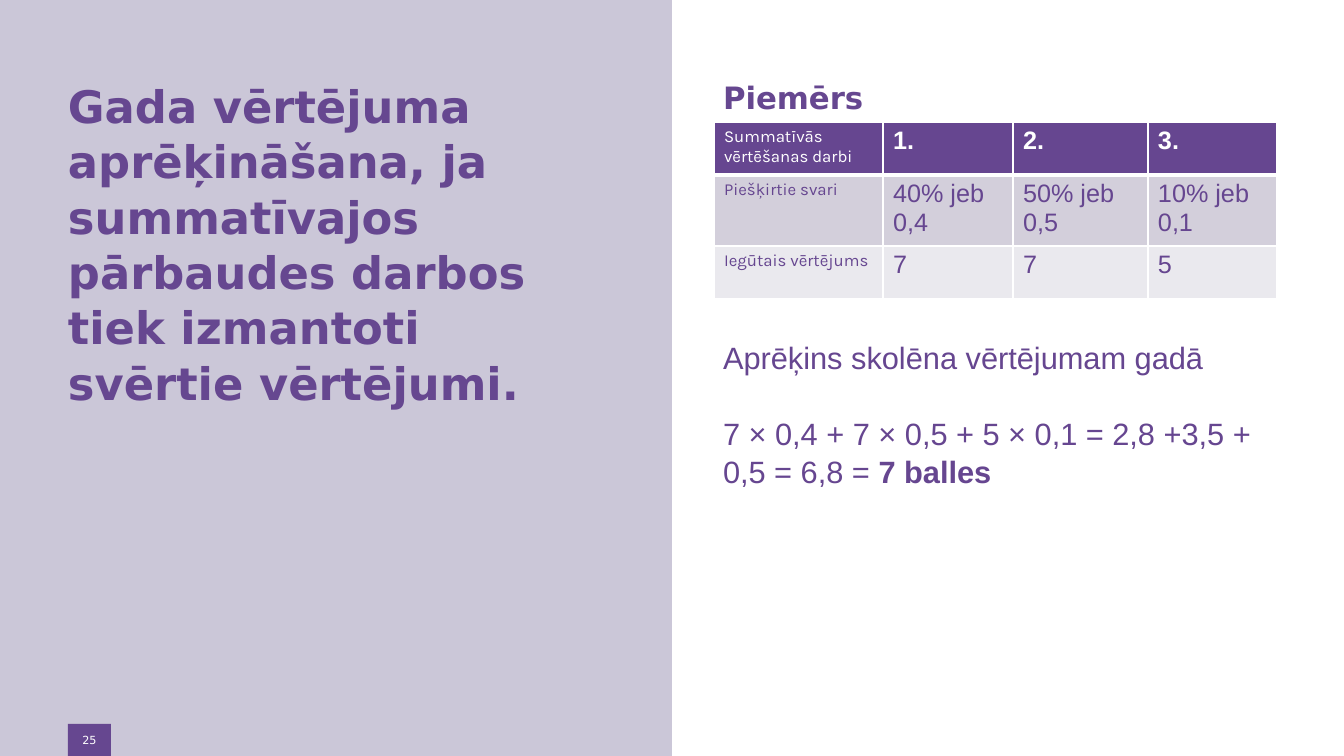
from lxml import etree
from pptx import Presentation
from pptx.dml.color import RGBColor
from pptx.enum.shapes import MSO_SHAPE
from pptx.enum.text import MSO_ANCHOR, MSO_AUTO_SIZE, PP_ALIGN
from pptx.oxml.ns import qn
from pptx.util import Pt

RECTANGLE = MSO_SHAPE.RECTANGLE
TOP, MIDDLE = MSO_ANCHOR.TOP, MSO_ANCHOR.MIDDLE
LEFT, CENTER = PP_ALIGN.LEFT, PP_ALIGN.CENTER
NO_AUTOFIT = MSO_AUTO_SIZE.NONE

# Content
HEADING = ("Gada vērtējuma aprēķināšana, ja summatīvajos pārbaudes darbos "
           "tiek izmantoti svērtie vērtējumi.")
PAGE = "25"
PURPLE, TABLE_PURPLE, LILAC, WHITE = "664790", "664690", "CBC7D8", "FFFFFF"
SANS, ARIAL, KARLA = "DejaVu Sans", "Arial", "Karla"

# Each paragraph: gap above in px, font, colour, runs of (text, bold)
EXAMPLE = [
    (0, SANS, PURPLE, [("Piemērs", True)]),
    (222, ARIAL, TABLE_PURPLE, [("Aprēķins skolēna vērtējumam gadā", False)]),
    (37, ARIAL, TABLE_PURPLE, [
        ("7 × 0,4 + 7 × 0,5 + 5 × 0,1 = 2,8 +3,5 + 0,5 = 6,8 = ", False),
        ("7 balles", True)]),
]
GRADES = [
    ("Summatīvās vērtēšanas darbi", "1.", "2.", "3."),
    ("Piešķirtie svari", "40% jeb 0,4", "50% jeb 0,5", "10% jeb 0,1"),
    ("Iegūtais vērtējums", "7", "7", "5"),
]
ROW_FILLS = [TABLE_PURPLE, "D3CFDB", "EAE9EE"]
ROW_HEIGHTS = [53, 71, 53]
COLUMN_WIDTHS = [169, 130, 135, 129]

SLIDE_W, SLIDE_H = 1344, 756
SCALE = 12192000 / SLIDE_W


def px(length):
    return round(length * SCALE)


def rgb(value):
    return RGBColor.from_string(value)


def style(run, font, size, color, bold=False):
    run.font.name = font
    run.font.size = Pt(size)
    run.font.color.rgb = rgb(color)
    run.font.bold = bold


def place(shape, left, top, width, height):
    shape.left, shape.top = px(left), px(top)
    shape.width, shape.height = px(width), px(height)


def add_panel(left, top, width, height, color):
    panel = slide.shapes.add_shape(
        RECTANGLE, px(left), px(top), px(width), px(height))
    panel.shadow.inherit = False
    panel.fill.solid()
    panel.fill.fore_color.rgb = rgb(color)
    panel.line.fill.background()
    return panel


def add_border(cell, side, points):
    line = etree.SubElement(cell._tc.get_or_add_tcPr(), qn("a:" + side),
                            w=str(Pt(points)))
    fill = etree.SubElement(line, qn("a:solidFill"))
    etree.SubElement(fill, qn("a:srgbClr"), val=WHITE)


prs = Presentation()
prs.slide_width, prs.slide_height = px(SLIDE_W), px(SLIDE_H)
slide = prs.slides.add_slide(prs.slide_layouts[1])
heading, example = slide.placeholders

# Left half, behind the heading
left_half = add_panel(0, 0, SLIDE_W // 2, SLIDE_H, LILAC)
heading.element.addprevious(left_half.element)

# Heading
place(heading, 68, 72, 486, 216)
frame = heading.text_frame
frame.text = HEADING
frame.word_wrap = True
frame.auto_size = NO_AUTOFIT
frame.vertical_anchor = TOP
frame.margin_left = frame.margin_right = 0
frame.paragraphs[0].alignment = LEFT
frame.paragraphs[0].line_spacing = 1.03
style(frame.paragraphs[0].runs[0], SANS, 32, PURPLE, True)

# Page number
page = add_panel(68, 724, 43, 32, PURPLE)
frame = page.text_frame
frame.text = PAGE
frame.vertical_anchor = MIDDLE
frame.margin_left = frame.margin_right = px(4)
frame.margin_top = frame.margin_bottom = px(4)
frame.paragraphs[0].alignment = CENTER
style(frame.paragraphs[0].runs[0], SANS, 8, WHITE)

# Worked example; the gap after its first line holds the table
place(example, 713, 72, 554, 532)
frame = example.text_frame
frame.auto_size = NO_AUTOFIT
frame.vertical_anchor = TOP
for index, (gap, font, color, runs) in enumerate(EXAMPLE):
    paragraph = frame.paragraphs[0] if index == 0 else frame.add_paragraph()
    paragraph.alignment = LEFT
    paragraph.line_spacing = 1.04
    paragraph.space_before = px(gap)
    properties = paragraph._p.get_or_add_pPr()
    properties.set("marL", "0")
    properties.set("indent", "0")
    etree.SubElement(properties, qn("a:buNone"))
    for text, bold in runs:
        run = paragraph.add_run()
        run.text = text
        style(run, font, 22, color, bold)

# Grade table
grades = slide.shapes.add_table(
    len(GRADES), len(COLUMN_WIDTHS), px(714), px(122),
    px(sum(COLUMN_WIDTHS)), px(sum(ROW_HEIGHTS))).table
for column, width in zip(grades.columns, COLUMN_WIDTHS):
    column.width = px(width)
for r, values in enumerate(GRADES):
    grades.rows[r].height = px(ROW_HEIGHTS[r])
    for c, value in enumerate(values):
        cell = grades.cell(r, c)
        cell.text = value
        font, size = (KARLA, 12) if c == 0 else (ARIAL, 18)
        style(cell.text_frame.paragraphs[0].runs[0], font, size,
              WHITE if r == 0 else TABLE_PURPLE, r == 0 and c > 0)
        for side, points in (("lnL", 1), ("lnR", 1),
                             ("lnT", 3 if r == 1 else 1),
                             ("lnB", 3 if r == 0 else 1)):
            add_border(cell, side, points)
        cell.fill.solid()
        cell.fill.fore_color.rgb = rgb(ROW_FILLS[r])

prs.save("out.pptx")
